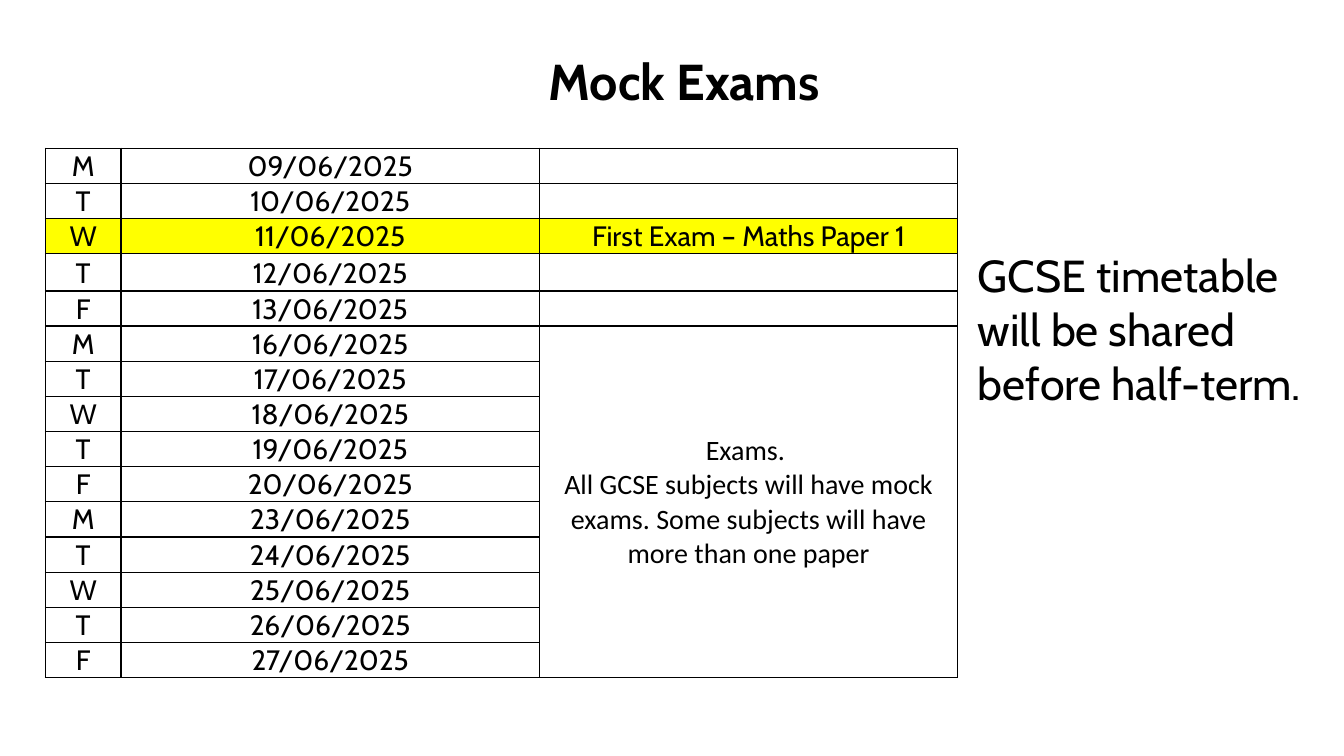
from lxml import etree
from pptx import Presentation
from pptx.dml.color import RGBColor
from pptx.enum.text import MSO_ANCHOR, MSO_AUTO_SIZE, PP_ALIGN
from pptx.oxml.ns import qn
from pptx.util import Inches, Pt

BLACK = RGBColor(0x00, 0x00, 0x00)
YELLOW = RGBColor(0xFF, 0xFF, 0x00)
LEFT, CENTER = PP_ALIGN.LEFT, PP_ALIGN.CENTER
MIDDLE, BOTTOM = MSO_ANCHOR.MIDDLE, MSO_ANCHOR.BOTTOM
GROW = MSO_AUTO_SIZE.SHAPE_TO_FIT_TEXT

COLUMN_WIDTHS = (0.75, 4.15, 4.15)
ROW_HEIGHT = 0.32
FIRST_EXAM_ROW = 2
TALL_ROW, TALL_HEIGHT = 3, 0.37
EXAM_PERIOD_ROW = 5
SCHOOL_DAYS = [
    (letter, f"{monday + offset:02d}/06/2025")
    for monday in (9, 16, 23)
    for offset, letter in enumerate("MTWTF")
]


class ExamSlide:
    """Holds the text style and the slide, and adds its elements."""

    def __init__(self, slide, font="Cabin", color=BLACK):
        self.slide = slide
        self.font = font
        self.color = color

    def style_text(self, frame, text, size, align, bold=False, font=None):
        frame.text = text
        for paragraph in frame.paragraphs:
            paragraph.alignment = align
            for run in paragraph.runs:
                run.font.name = font or self.font
                run.font.size = Pt(size)
                run.font.bold = bold
                run.font.color.rgb = self.color

    def text(self, left, top, width, height, text, size, align=LEFT, bold=False):
        box = self.slide.shapes.add_textbox(
            Inches(left), Inches(top), Inches(width), Inches(height))
        box.text_frame.word_wrap = True
        box.text_frame.auto_size = GROW
        self.style_text(box.text_frame, text, size, align, bold)

    def border(self, cell):
        properties = cell._tc.get_or_add_tcPr()
        for position, side in enumerate(("a:lnL", "a:lnR", "a:lnT", "a:lnB")):
            line = etree.Element(qn(side), w=str(Pt(1)))
            fill = etree.SubElement(line, qn("a:solidFill"))
            etree.SubElement(fill, qn("a:srgbClr"), val=str(self.color))
            properties.insert(position, line)

    def table(self, left, top, row_count):
        table = self.slide.shapes.add_table(
            row_count, len(COLUMN_WIDTHS), Inches(left), Inches(top),
            Inches(sum(COLUMN_WIDTHS)), Inches(ROW_HEIGHT * row_count)).table
        table.first_row = table.horz_banding = False
        for column, width in zip(table.columns, COLUMN_WIDTHS):
            column.width = Inches(width)
        for row in table.rows:
            row.height = Inches(ROW_HEIGHT)
        for cell in table.iter_cells():
            cell.margin_left = cell.margin_right = cell.margin_top = Inches(0.01)
            cell.margin_bottom = 0
            cell.vertical_anchor = BOTTOM
            cell.fill.background()
            self.border(cell)
        return table

    def timetable(self, left, top):
        table = self.table(left, top, len(SCHOOL_DAYS))
        table.rows[TALL_ROW].height = Inches(TALL_HEIGHT)
        for row, day in enumerate(SCHOOL_DAYS):
            for column, value in enumerate(day):
                self.style_text(table.cell(row, column).text_frame, value, 20, CENTER)

        first_exam = table.cell(FIRST_EXAM_ROW, 2)
        self.style_text(first_exam.text_frame, "First Exam – Maths Paper 1", 20, CENTER)
        for cell in table.rows[FIRST_EXAM_ROW].cells:
            cell.fill.solid()
            cell.fill.fore_color.rgb = YELLOW

        exam_period = table.cell(EXAM_PERIOD_ROW, 2)
        exam_period.merge(table.cell(len(SCHOOL_DAYS) - 1, 2))
        exam_period.vertical_anchor = MIDDLE
        self.style_text(
            exam_period.text_frame,
            "Exams. \nAll GCSE subjects will have mock exams. "
            "Some subjects will have more than one paper",
            20, CENTER, font="Calibri")


def main():
    presentation = Presentation()
    presentation.slide_width = Inches(13.33)
    presentation.slide_height = Inches(7.5)
    page = ExamSlide(presentation.slides.add_slide(presentation.slide_layouts[6]))
    page.timetable(0.45, 1.47)
    page.text(2.39, 0.45, 8.79, 0.71, "Mock Exams", 36, CENTER, bold=True)
    page.text(9.6, 2.41, 3.63, 1.72,
              "GCSE timetable will be shared before half-term.", 32)
    presentation.save("out.pptx")


if __name__ == "__main__":
    main()
